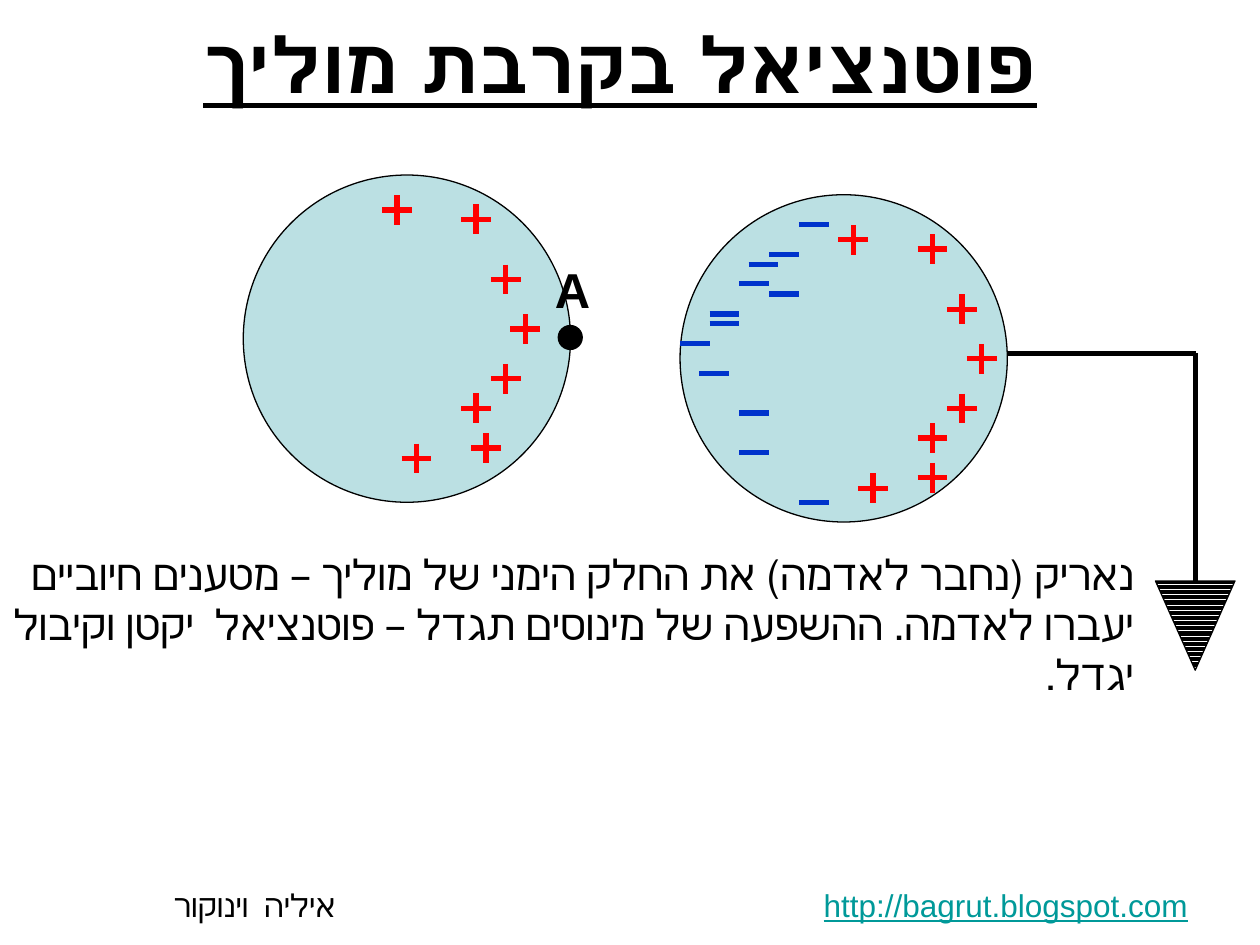
from pptx import Presentation
from pptx.dml.color import RGBColor
from pptx.enum.dml import MSO_PATTERN
from pptx.enum.shapes import MSO_CONNECTOR, MSO_SHAPE
from pptx.enum.text import MSO_ANCHOR, PP_ALIGN
from pptx.oxml.ns import qn
from pptx.util import Pt
from lxml.etree import SubElement

BLACK = RGBColor(0x00, 0x00, 0x00)
WHITE = RGBColor(0xFF, 0xFF, 0xFF)
RED = RGBColor(0xFF, 0x00, 0x00)
BLUE = RGBColor(0x00, 0x33, 0xCC)
TEAL = RGBColor(0x00, 0x99, 0x99)
PALE_BLUE = RGBColor(0xBB, 0xE0, 0xE3)

deck = Presentation()
deck.slide_width, deck.slide_height = Pt(720), Pt(540)
page = deck.slides.add_slide(deck.slide_layouts[0])


def add_text(para, text, size, color=BLACK, bold=False, underline=False,
             align=PP_ALIGN.RIGHT):
    """Add a run to a right-to-left paragraph."""
    para.alignment = align
    para._p.get_or_add_pPr().set("rtl", "1")
    span = para.add_run()
    span.text = text
    span.font.name, span.font.size = "Arial", Pt(size)
    span.font.bold, span.font.underline = bold, underline
    span.font.color.rgb = color


def add_line(x1, y1, x2, y2, color=BLACK):
    """Draw a 3 pt line without shadow."""
    line = page.shapes.add_connector(
        MSO_CONNECTOR.STRAIGHT, Pt(x1), Pt(y1), Pt(x2), Pt(y2))
    line.line.color.rgb, line.line.width = color, Pt(3)
    SubElement(line._element.spPr, qn("a:effectLst"))


# Title
subtitle = page.placeholders[1]
subtitle._element.getparent().remove(subtitle._element)
title = page.shapes.title
title.left, title.top, title.width, title.height = Pt(91), Pt(2), Pt(527), Pt(68)
title.text_frame.vertical_anchor = MSO_ANCHOR.MIDDLE
add_text(title.text_frame.paragraphs[0], "פוטנציאל בקרבת מוליך", 44,
         bold=True, underline=True, align=PP_ALIGN.CENTER)

# Conductors, point A and the earth symbol
for kind, left, top, width, height, color in (
    (MSO_SHAPE.OVAL, 139, 100, 187, 187, PALE_BLUE),
    (MSO_SHAPE.OVAL, 388.6, 111.3, 187, 187, PALE_BLUE),
    (MSO_SHAPE.OVAL, 319, 186, 13.7, 13.7, BLACK),
    (MSO_SHAPE.ISOSCELES_TRIANGLE, 660.3, 332, 45.4, 51, None),
):
    shape = page.shapes.add_shape(kind, Pt(left), Pt(top), Pt(width), Pt(height))
    shape.shadow.inherit = False
    shape.line.color.rgb, shape.line.width = BLACK, Pt(0.75)
    if color is not None:
        shape.fill.solid()
        shape.fill.fore_color.rgb = color
    else:
        shape._element.spPr.xfrm.set("flipV", "1")
        shape.fill.patterned()
        shape.fill.pattern = MSO_PATTERN.DARK_HORIZONTAL
        shape.fill.fore_color.rgb, shape.fill.back_color.rgb = BLACK, WHITE

# Positive charges: the right conductor repeats the left one, shifted
HALF = 8.5
SHIFT_X, SHIFT_Y = 260.8, 17
shared = [(272, 125.3), (226.8, 120), (238, 262), (289, 159.7),
          (300.2, 188), (272, 233.3), (289, 216.5)]
positives = shared + [(x + SHIFT_X, y + SHIFT_Y) for x, y in shared]
positives += [(277.7, 256), (532.8, 273)]
for x, y in positives:
    add_line(x, y - HALF, x, y + HALF, RED)
    add_line(x - HALF, y, x + HALF, y, RED)

# Negative charges on the right conductor
for x, y in ((436.3, 151), (408, 213.3), (431, 236), (448, 168), (465, 287),
             (431, 258.6), (465, 128.3), (414, 185), (448, 145.4),
             (431, 162.2), (414, 179.4), (397, 196.3)):
    add_line(x - HALF, y, x + HALF, y, BLUE)

# Earth wire
add_line(575.5, 201.8, 683.3, 201.8)
add_line(683.3, 201.8, 683.3, 332)

# Label, explanation and footer
paras = []
for left, top, width, height in ((310.4, 145, 34, 41), (0, 309.6, 655, 65),
                                 (45.4, 502.6, 640.4, 29)):
    box = page.shapes.add_textbox(Pt(left), Pt(top), Pt(width), Pt(height))
    box.text_frame.word_wrap = True
    paras.append(box.text_frame.paragraphs[0])
label, explanation, footer = paras

add_text(label, "A", 28, bold=True)
add_text(explanation,
         "נאריק (נחבר לאדמה) את החלק הימני של מוליך – מטענים חיוביים "
         "יעברו לאדמה. ההשפעה של מינוסים תגדל – פוטנציאל  יקטן וקיבול יגדל.", 24)

# A tab stop separates the address from the author
tabs = SubElement(footer._p.get_or_add_pPr(), qn("a:tabLst"))
SubElement(tabs, qn("a:tab"), pos=str(Pt(487)), algn="r")
add_text(footer, "http://bagrut.blogspot.com", 18, TEAL, underline=True)
add_text(footer, "\tאיליה  וינוקור", 18)

deck.save("out.pptx")
